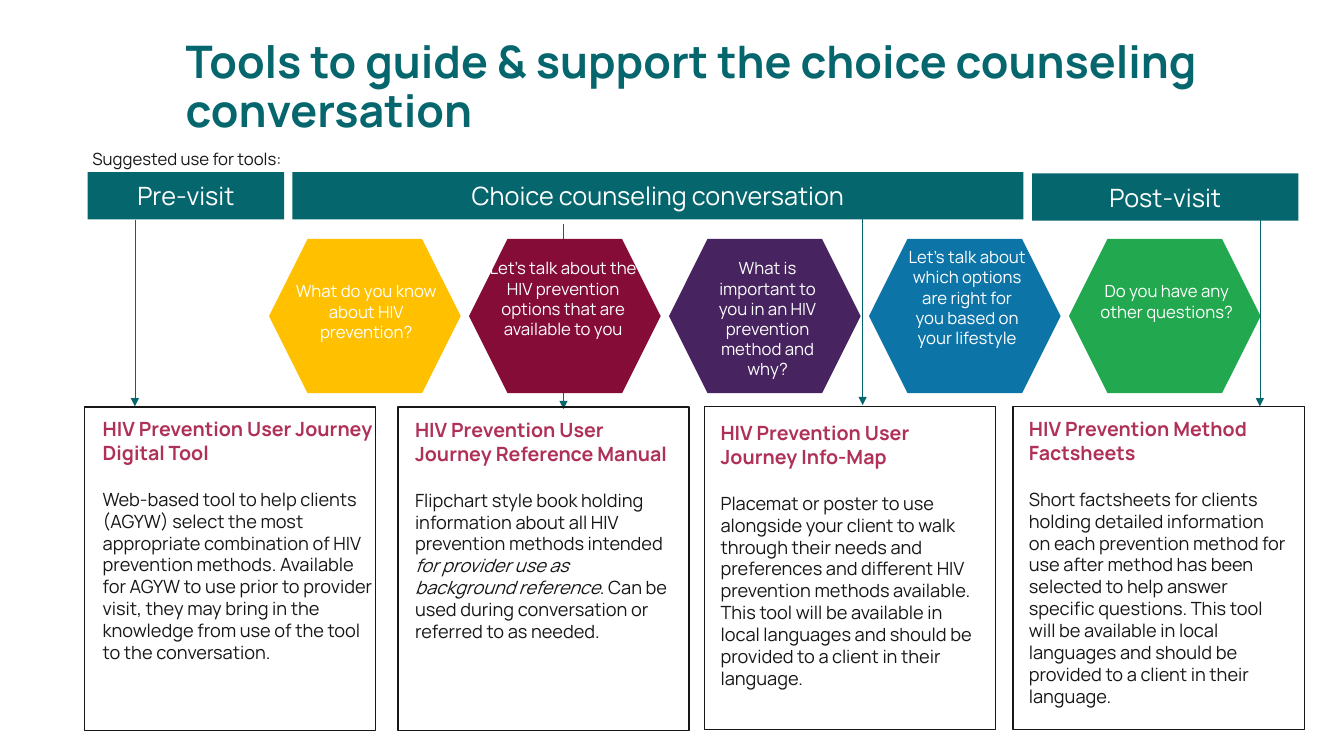
from lxml import etree
from pptx import Presentation
from pptx.dml.color import RGBColor
from pptx.enum.shapes import MSO_CONNECTOR, MSO_SHAPE
from pptx.enum.text import MSO_ANCHOR, MSO_AUTO_SIZE, PP_ALIGN
from pptx.oxml.ns import qn
from pptx.util import Cm, Pt

LEFT, CENTER = PP_ALIGN.LEFT, PP_ALIGN.CENTER
MIDDLE = MSO_ANCHOR.MIDDLE
RECTANGLE, HEXAGON = MSO_SHAPE.RECTANGLE, MSO_SHAPE.HEXAGON
STRAIGHT = MSO_CONNECTOR.STRAIGHT
NO_AUTOFIT = MSO_AUTO_SIZE.NONE

FONT = "Manrope"
COLORS = {
    "teal": "05676D",
    "ink": "181717",
    "rose": "AF3158",
    "white": "FFFFFF",
    "yellow": "FFC000",
    "maroon": "840C36",
    "purple": "47245F",
    "blue": "0D74A8",
    "green": "22A84F",
}

# Visit phases: label, left, top, width in cm
PHASES = [
    ("Pre-visit", 2.21, 4.34, 4.95),
    ("Choice counseling conversation", 7.37, 4.34, 18.42),
    ("Post-visit", 26.01, 4.37, 6.71),
]

# Conversation steps: colour, question, box of the question in cm
STEPS = [
    ("yellow", "What do you know about HIV prevention?", (7.16, 6.96, 4.14, 1.8)),
    ("maroon", "Let’s talk about the HIV prevention options that are available to you",
     (12.01, 6.38, 4.37, 2.82)),
    ("purple", "What is important to you in an HIV prevention method and why?",
     (17.58, 6.38, 3.53, 3.33)),
    ("blue", "Let’s talk about which options are right for you based on your lifestyle",
     (22.61, 6.1, 3.53, 3.33)),
    ("green", "Do you have any other questions?", (27.46, 6.96, 3.89, 1.8)),
]
STEP_LEFT, STEP_TOP, STEP_PITCH = 6.78, 6.02, 5.04

# Tools: name, description runs (every second one italic), frame corner, text box in cm
TOOLS = [
    ("HIV Prevention User Journey Digital Tool",
     ["Web-based tool to help clients (AGYW) select the most appropriate combination of "
      "HIV prevention methods. Available for AGYW to use prior to provider visit, they may "
      "bring in the knowledge from use of the tool to the conversation."],
     (2.13, 10.26), (2.34, 10.39, 7.34, 8.2)),
    ("HIV Prevention User Journey Reference Manual",
     ["Flipchart style book holding information about all HIV prevention methods intended ",
      "for provider use as background reference",
      ". Can be used during conversation or referred to as needed."],
     (10.03, 10.26), (10.21, 10.41, 6.91, 8.28)),
    ("HIV Prevention User Journey Info-Map",
     ["Placemat or poster to use alongside your client to walk through their needs and "
      "preferences and different HIV prevention methods available. This tool will be "
      "available in local languages and should be provided to a client in their language."],
     (17.75, 10.24), (17.91, 10.49, 6.88, 7.82)),
    ("HIV Prevention Method Factsheets",
     ["Short factsheets for clients holding detailed information on each prevention method "
      "for use after method has been selected to help answer specific questions. This tool "
      "will be available in local languages and should be provided to a client in their "
      "language."],
     (25.53, 10.24), (25.68, 10.39, 7.04, 8.6)),
]

# Arrows from phase to tool: x, start, end in cm
MANUAL_ARROW = (14.2, 5.64, 10.31)
OTHER_ARROWS = [(3.4, 5.54, 10.24), (21.74, 5.51, 10.21), (31.75, 5.54, 10.24)]


def rgb(color):
    return RGBColor.from_string(COLORS[color])


def write(frame, *runs, size, color, bold=False, align=LEFT, before=0, spacing=None):
    """Add one paragraph; every second run is italic."""
    paragraph = frame.paragraphs[0]
    if paragraph.runs:
        paragraph = frame.add_paragraph()
    paragraph.alignment = align
    if before:
        paragraph.space_before = Pt(before)
    if spacing:
        paragraph.line_spacing = spacing
    for index, text in enumerate(runs):
        run = paragraph.add_run()
        run.text = text
        run.font.name = FONT
        run.font.size = Pt(size)
        run.font.bold = bold
        run.font.italic = index % 2 == 1
        run.font.color.rgb = rgb(color)


def add_text_box(slide, box):
    frame = slide.shapes.add_textbox(*map(Cm, box)).text_frame
    frame.word_wrap = True
    return frame


def add_block(slide, kind, box, fill=None, outline=None):
    block = slide.shapes.add_shape(kind, *map(Cm, box))
    block.shadow.inherit = False
    if fill:
        block.fill.solid()
        block.fill.fore_color.rgb = rgb(fill)
    else:
        block.fill.background()
    if outline:
        block.line.color.rgb = rgb(outline)
        block.line.width = Pt(1)
    else:
        block.line.fill.background()
    return block


def add_arrow(slide, x, start, end):
    arrow = slide.shapes.add_connector(STRAIGHT, Cm(x), Cm(start), Cm(x), Cm(end))
    arrow.line.color.rgb = rgb("teal")
    arrow.line.width = Pt(0.5)
    etree.SubElement(arrow.line._get_or_add_ln(), qn("a:tailEnd"), type="triangle")
    etree.SubElement(arrow._element.spPr, qn("a:effectLst"))


def add_title(slide, text):
    title = slide.shapes.title
    title.left, title.top, title.width, title.height = map(Cm, (2.44, 0.64, 29.67, 3.18))
    frame = title.text_frame
    frame.auto_size = NO_AUTOFIT
    frame.vertical_anchor = MIDDLE
    frame.margin_left = Cm(2.24)
    write(frame, text, size=32, color="teal", bold=True, spacing=0.9)


def add_phase(slide, label, left, top, width):
    frame = add_block(slide, RECTANGLE, (left, top, width, 1.19), fill="teal").text_frame
    frame.vertical_anchor = MIDDLE
    write(frame, label, size=18, color="white", align=CENTER)


def add_step(slide, index, color, question, box):
    left = STEP_LEFT + index * STEP_PITCH
    add_block(slide, HEXAGON, (left, STEP_TOP, 4.83, 3.89), fill=color)
    write(add_text_box(slide, box), question, size=12, color="white", align=CENTER)


def add_tool(slide, name, description, corner, box):
    add_block(slide, RECTANGLE, (*corner, 7.34, 8.15), outline="ink")
    frame = add_text_box(slide, box)
    write(frame, name, size=14, color="rose", bold=True)
    write(frame, *description, size=13, color="ink", before=17)


def main():
    deck = Presentation()
    deck.slide_width, deck.slide_height = Cm(33.87), Cm(19.05)
    slide = deck.slides.add_slide(deck.slide_layouts[5])

    # Heading
    add_title(slide, "Tools to guide & support the choice counseling conversation")
    write(add_text_box(slide, (2.08, 3.63, 6.71, 0.76)), "Suggested use for tools:",
          size=12, color="ink")

    # Phases and steps, the manual's arrow passing behind its hexagon
    add_arrow(slide, *MANUAL_ARROW)
    for phase in PHASES:
        add_phase(slide, *phase)
    for index, step in enumerate(STEPS):
        add_step(slide, index, *step)

    # Tools and the arrows that lead to them
    for tool in TOOLS:
        add_tool(slide, *tool)
    for arrow in OTHER_ARROWS:
        add_arrow(slide, *arrow)

    deck.save("out.pptx")


if __name__ == "__main__":
    main()
